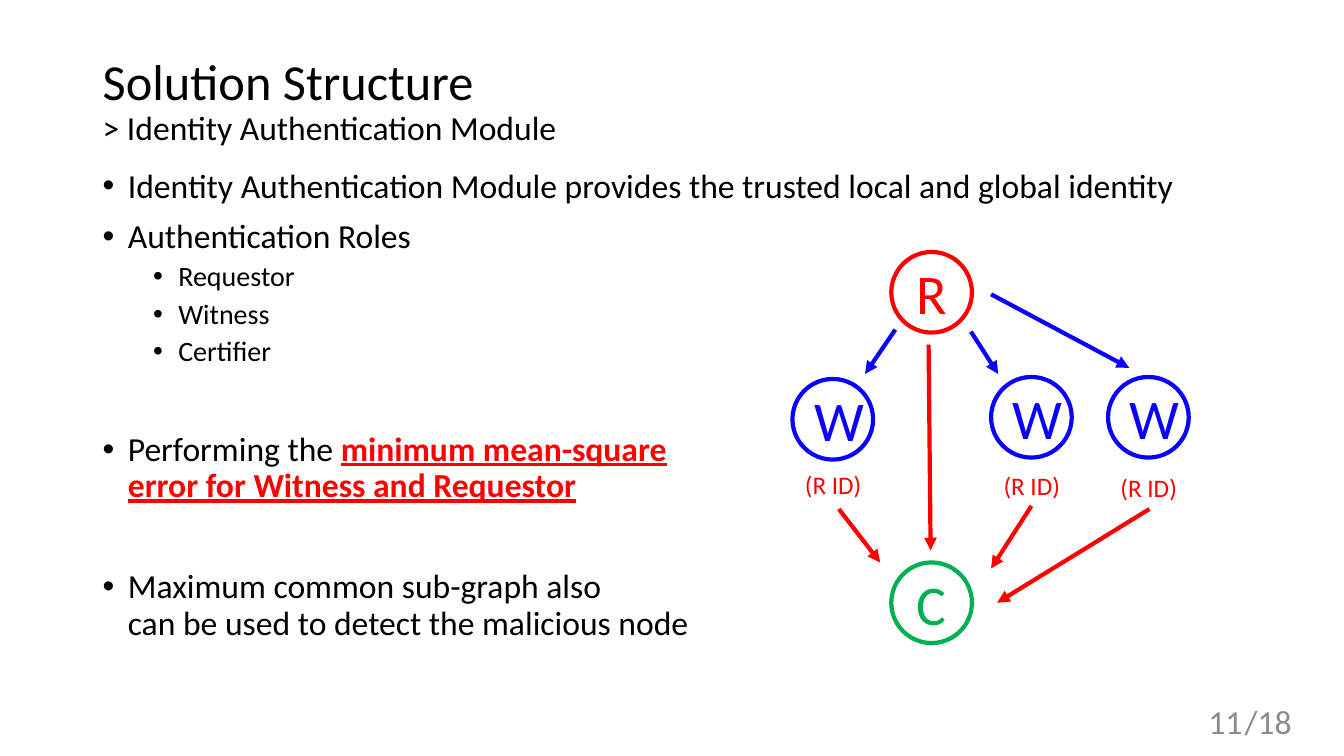
"""Build the identity authentication slide: role bullets beside a requestor, witness and certifier graph."""
from dataclasses import dataclass

from lxml.etree import SubElement
from pptx import Presentation
from pptx.dml.color import RGBColor
from pptx.enum.shapes import MSO_CONNECTOR, MSO_SHAPE
from pptx.enum.text import MSO_ANCHOR, PP_ALIGN
from pptx.oxml.ns import qn
from pptx.util import Inches, Pt


@dataclass(frozen=True)
class Theme:
    font: str = "Calibri"
    black: str = "000000"
    grey: str = "8C8C8C"
    red: str = "FF0000"
    blue: str = "0900FF"
    green: str = "00B050"
    title: int = 36
    body: int = 24
    role: int = 20
    tag: int = 18
    letter: int = 40
    stroke: int = 3


THEME = Theme()
SLIDE_W, SLIDE_H = 13.33, 7.5
MARGIN, CONTENT_W = 0.92, 11.5
TITLE_TOP, BODY_TOP, FOOTER_TOP = 0.4, 1.63, 6.95
FOOTER_H = 0.4
DIAMETER = 0.8
TAG_W, TAG_H = 0.77, 0.4
INDENT = 0.25
GAP, ROLE_GAP, SECTION_GAP = 10, 5, 46.4

HEADING = [("Solution Structure", THEME.title), ("> Identity Authentication Module", THEME.body)]
BULLETS = [
    (0, GAP, "Identity Authentication Module provides the trusted local and global identity", ""),
    (0, GAP, "Authentication Roles", ""),
    (1, ROLE_GAP, "Requestor", ""),
    (1, ROLE_GAP, "Witness", ""),
    (1, ROLE_GAP, "Certifier", ""),
    (0, SECTION_GAP, "Performing the ", "minimum mean-square\nerror for Witness and Requestor"),
    (0, SECTION_GAP, "Maximum common sub-graph also\ncan be used to detect the malicious node", ""),
]
FOOTER = [("11", 9.42, 3), ("/18", 12.18, 0.73)]

NODES = {
    "requestor": ("R", THEME.red, 9.24, 2.9),
    "left witness": ("W", THEME.blue, 8.26, 4.16),
    "middle witness": ("W", THEME.blue, 10.23, 4.14),
    "right witness": ("W", THEME.blue, 11.39, 4.14),
    "certifier": ("C", THEME.green, 9.24, 5.98),
}
TAG_TEXT = "(R ID)"
TAG_DROPS = {"left witness": 0.45, "middle witness": 0.48, "right witness": 0.5}
ARROWS = [
    ("requestor", (-0.36, 0.37), "left witness", (0.32, -0.45), THEME.blue),
    ("requestor", (0.39, 0.39), "middle witness", (-0.33, -0.43), THEME.blue),
    ("requestor", (0.59, 0.02), "right witness", (-0.19, -0.49), THEME.blue),
    ("requestor", (-0.03, 0.52), "certifier", (-0.01, -0.52), THEME.red),
    ("left witness", (0.06, 0.89), "certifier", (-0.51, -0.4), THEME.red),
    ("middle witness", (0, 0.88), "certifier", (0.59, -0.34), THEME.red),
    ("right witness", (0.01, 0.91), "certifier", (0.65, 0), THEME.red),
]


def style(font, size, color):
    font.name, font.size = THEME.font, Pt(size)
    font.color.rgb = RGBColor.from_string(color)


def add_frame(slide, left, top, width, height, anchor=MSO_ANCHOR.TOP, wrap=True):
    frame = slide.shapes.add_textbox(*map(Inches, (left, top, width, height))).text_frame
    frame.word_wrap, frame.vertical_anchor = wrap, anchor
    return frame


def next_paragraph(frame, index):
    return frame.paragraphs[0] if index == 0 else frame.add_paragraph()


def add_lines(paragraph, text, size, color, strong=False):
    for index, line in enumerate(text.split("\n")):
        if index:
            paragraph.add_line_break()
        run = paragraph.add_run()
        run.text = line
        style(run.font, size, color)
        if strong:
            run.font.bold = run.font.underline = True


def add_heading(slide):
    frame = add_frame(slide, MARGIN, TITLE_TOP, CONTENT_W, BODY_TOP - TITLE_TOP, MSO_ANCHOR.MIDDLE)
    for index, (line, size) in enumerate(HEADING):
        paragraph = next_paragraph(frame, index)
        paragraph.text, paragraph.line_spacing = line, 0.9
        style(paragraph.font, size, THEME.black)


def add_bullets(slide):
    frame = add_frame(slide, MARGIN, BODY_TOP, CONTENT_W, 5.63)
    for index, (level, gap, plain, strong) in enumerate(BULLETS):
        paragraph = next_paragraph(frame, index)
        paragraph.level, paragraph.line_spacing, paragraph.space_before = level, 0.9, Pt(gap)
        size = THEME.role if level else THEME.body
        add_lines(paragraph, plain, size, THEME.black)
        if strong:
            add_lines(paragraph, strong, size, THEME.red, strong=True)
        properties = paragraph._p.get_or_add_pPr()
        properties.set("marL", str(Inches(INDENT * (1 + 2 * level))))
        properties.set("indent", str(-Inches(INDENT)))
        SubElement(properties, qn("a:buFont"), typeface="Arial")
        SubElement(properties, qn("a:buChar"), char="•")


def add_footer(slide):
    for text, left, width in FOOTER:
        paragraph = add_frame(slide, left, FOOTER_TOP, width, FOOTER_H, MSO_ANCHOR.MIDDLE).paragraphs[0]
        paragraph.text, paragraph.alignment = text, PP_ALIGN.RIGHT
        style(paragraph.font, THEME.body, THEME.grey)


def add_node(slide, letter, color, x, y):
    corner = (x - DIAMETER / 2, y - DIAMETER / 2)
    circle = slide.shapes.add_shape(MSO_SHAPE.OVAL, *map(Inches, (*corner, DIAMETER, DIAMETER)))
    circle.shadow.inherit = False
    circle.fill.background()
    circle.line.color.rgb = RGBColor.from_string(color)
    circle.line.width = Pt(THEME.stroke)
    paragraph = circle.text_frame.paragraphs[0]
    paragraph.text, paragraph.alignment = letter, PP_ALIGN.CENTER
    style(paragraph.font, THEME.letter, color)


def add_tag(slide, witness, drop):
    x, y = NODES[witness][2:]
    frame = add_frame(slide, x - TAG_W / 2 + 0.01, y + drop, TAG_W, TAG_H, wrap=False)
    paragraph = frame.paragraphs[0]
    paragraph.text = TAG_TEXT
    style(paragraph.font, THEME.tag, THEME.red)


def add_arrow(slide, source, leave, target, arrive, color):
    start = [at + shift for at, shift in zip(NODES[source][2:], leave)]
    end = [at + shift for at, shift in zip(NODES[target][2:], arrive)]
    arrow = slide.shapes.add_connector(MSO_CONNECTOR.STRAIGHT, *map(Inches, start + end))
    arrow.line.color.rgb = RGBColor.from_string(color)
    arrow.line.width = Pt(THEME.stroke)
    SubElement(arrow.line._get_or_add_ln(), qn("a:tailEnd"), type="triangle")
    SubElement(arrow._element.spPr, qn("a:effectLst"))


def main():
    deck = Presentation()
    deck.slide_width, deck.slide_height = Inches(SLIDE_W), Inches(SLIDE_H)
    slide = deck.slides.add_slide(deck.slide_layouts[6])
    add_heading(slide)
    add_bullets(slide)
    add_footer(slide)
    for node in NODES.values():
        add_node(slide, *node)
    for witness, drop in TAG_DROPS.items():
        add_tag(slide, witness, drop)
    for arrow in ARROWS:
        add_arrow(slide, *arrow)
    deck.save("out.pptx")


if __name__ == "__main__":
    main()
